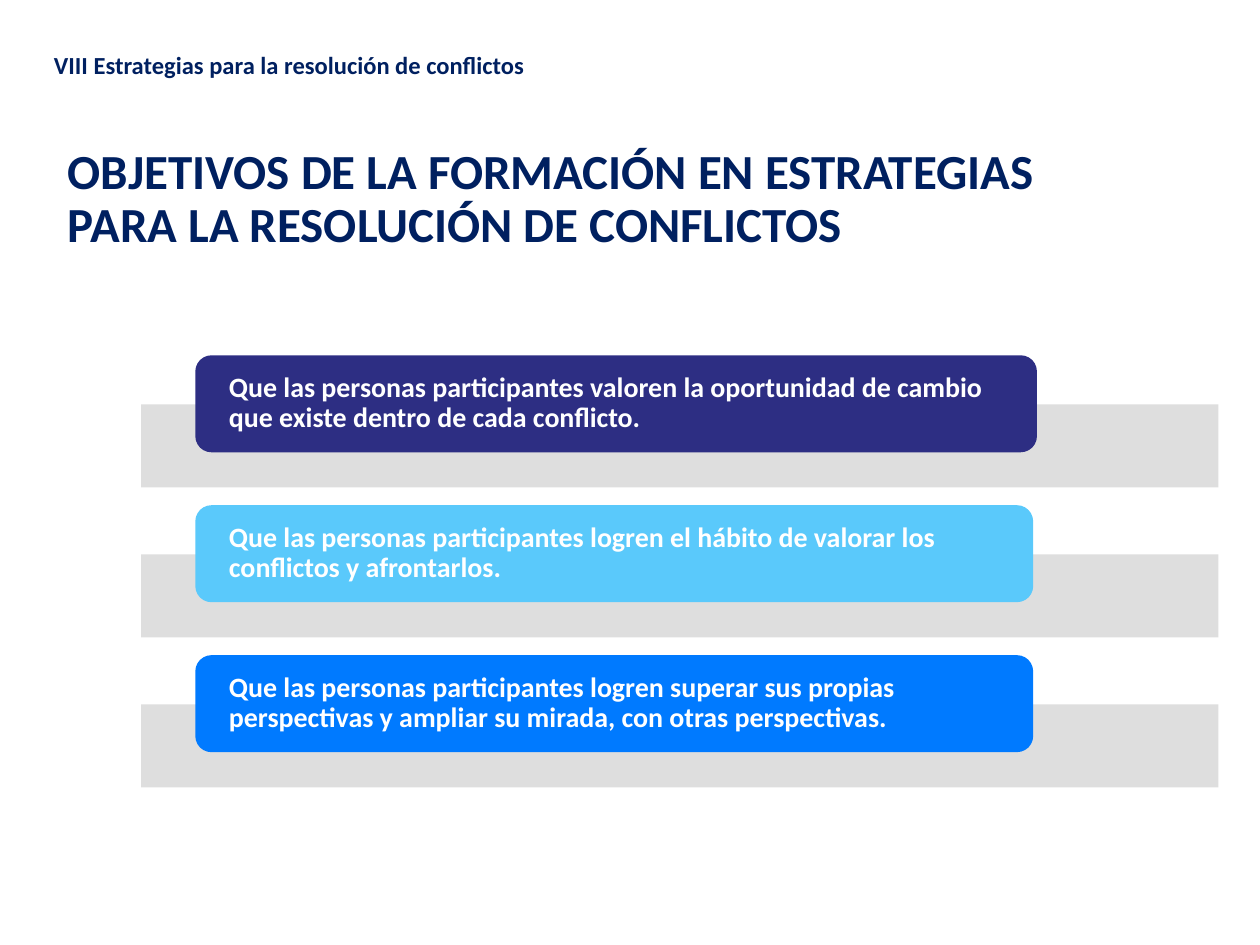
from lxml.etree import SubElement
from pptx import Presentation
from pptx.dml.color import RGBColor
from pptx.enum.shapes import MSO_SHAPE as Shape
from pptx.enum.text import MSO_ANCHOR as Anchor, PP_ALIGN as Align
from pptx.oxml.ns import qn
from pptx.util import Inches, Pt

COLORS = {
    "navy": "002060",
    "white": "FFFFFF",
    "bar": "DBDBDB",
    "indigo": "2D2E83",
    "sky": "5AC9FB",
    "blue": "007AFF",
}
HEADER = "VIII Estrategias para la resolución de conflictos"
TITLE = "OBJETIVOS DE LA FORMACIÓN EN ESTRATEGIAS PARA LA RESOLUCIÓN DE CONFLICTOS"
# text, colour, card width
GOALS = [
    ("Que las personas participantes valoren la oportunidad de cambio "
     "que existe dentro de cada conflicto.", "indigo", 6.68),
    ("Que las personas participantes logren el hábito de valorar los "
     "conflictos y afrontarlos.", "sky", 6.65),
    ("Que las personas participantes logren superar sus propias "
     "perspectivas y ampliar su mirada, con otras perspectivas.", "blue", 6.65),
]
TOP, STEP = 2.82, 1.19
BAR_DROP = 0.39


def write(shape, text, size, color="navy", anchor=Anchor.MIDDLE,
          spacing=None, inset=(0.1, 0.05)):
    frame = shape.text_frame
    frame.word_wrap = True
    frame.vertical_anchor = anchor
    frame.margin_left = frame.margin_right = Inches(inset[0])
    frame.margin_top = frame.margin_bottom = Inches(inset[1])
    para = frame.paragraphs[0]
    para.alignment = Align.LEFT
    if spacing:
        para.line_spacing = spacing
    run = para.add_run()
    run.text = text
    font = run.font
    font.name, font.size, font.bold = "Calibri", Pt(size), True
    font.color.rgb = RGBColor.from_string(COLORS[color])


def add_box(slide, kind, place, color, alpha=None):
    """Add a borderless filled shape; alpha is its opacity in percent."""
    box = slide.shapes.add_shape(kind, *map(Inches, place))
    box.shadow.inherit = False
    box.line.fill.background()
    box.fill.solid()
    box.fill.fore_color.rgb = RGBColor.from_string(COLORS[color])
    if alpha is not None:
        tint = box.fill._xPr.find(qn("a:solidFill"))[0]
        SubElement(tint, qn("a:alpha"), val=str(alpha * 1000))
    return box


def add_text(slide, place, text, size, **style):
    write(slide.shapes.add_textbox(*map(Inches, place)), text, size, **style)


def main():
    deck = Presentation()
    deck.slide_width, deck.slide_height = Inches(10), Inches(7.5)
    slide = deck.slides.add_slide(deck.slide_layouts[6])

    add_text(slide, (0.44, 0.86, 8.62, 1.45), TITLE, 28, spacing=0.9)
    for i, (text, color, width) in enumerate(GOALS):
        top = TOP + i * STEP
        add_box(slide, Shape.RECTANGLE, (1.12, top + BAR_DROP, 8.55, 0.66),
                "bar", alpha=90)
        card = add_box(slide, Shape.ROUNDED_RECTANGLE,
                       (1.55, top, width, 0.77), color)
        write(card, text, 16, color="white", spacing=0.9, inset=(0.23, 0))
    add_text(slide, (0.33, 0.35, 4.94, 0.34), HEADER, 14, anchor=Anchor.TOP)

    deck.save("out.pptx")


if __name__ == "__main__":
    main()
